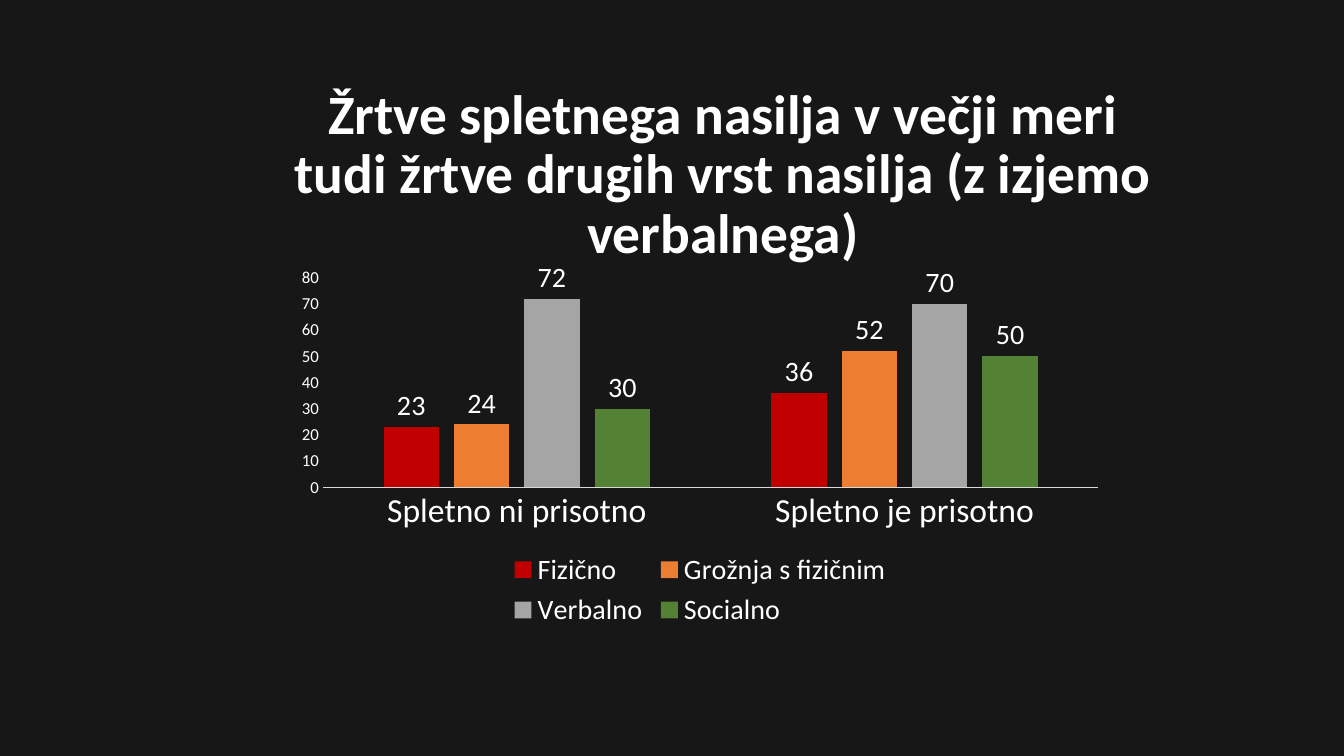
from pptx import Presentation
from pptx.chart.data import CategoryChartData
from pptx.dml.color import RGBColor
from pptx.enum.chart import XL_CHART_TYPE, XL_LABEL_POSITION, XL_LEGEND_POSITION, XL_TICK_MARK
from pptx.enum.text import MSO_ANCHOR, MSO_AUTO_SIZE, PP_ALIGN
from pptx.util import Inches, Pt

COLORS = {
    "back": "171717",
    "text": "FFFFFF",
    "axis": "D9D9D9",
    "Fizično": "C00000",
    "Grožnja s fizičnim": "ED7D31",
    "Verbalno": "A5A5A5",
    "Socialno": "548235",
}
VALUES = {
    "Fizično": (23, 36),
    "Grožnja s fizičnim": (24, 52),
    "Verbalno": (72, 70),
    "Socialno": (30, 50),
}


def color(name):
    return RGBColor.from_string(COLORS[name])


def style(font, size, bold=False):
    look = {"name": "Calibri", "size": Pt(size), "bold": bold}
    for key, value in look.items():
        setattr(font, key, value)
    font.color.rgb = color("text")


deck = Presentation()
deck.slide_width = Inches(13.33)
deck.slide_height = Inches(7.5)
slide = deck.slides.add_slide(deck.slide_layouts[5])
slide.background.fill.solid()
slide.background.fill.fore_color.rgb = color("back")

title = slide.shapes.title
place = {"left": 2.67, "top": 1.41, "width": 9, "height": 0.67}
for key, value in place.items():
    setattr(title, key, Inches(value))
frame = title.text_frame
frame.text = "Žrtve spletnega nasilja v večji meri tudi žrtve drugih vrst nasilja (z izjemo verbalnega)"
setup = {
    "word_wrap": True,
    "auto_size": MSO_AUTO_SIZE.NONE,
    "vertical_anchor": MSO_ANCHOR.MIDDLE,
}
for key, value in setup.items():
    setattr(frame, key, value)
line = frame.paragraphs[0]
line.alignment = PP_ALIGN.CENTER
line.line_spacing = 0.9
style(line.runs[0].font, 39.6, True)

data = CategoryChartData()
data.categories = ["Spletno ni prisotno", "Spletno je prisotno"]
for name, values in VALUES.items():
    data.add_series(name, values)
chart = slide.shapes.add_chart(
    XL_CHART_TYPE.COLUMN_CLUSTERED,
    Inches(2.83), Inches(2.58), Inches(8.23), Inches(3.7), data,
).chart
chart.has_title = False
style(chart.font, 10)

for axis, size in ((chart.category_axis, 24), (chart.value_axis, 12)):
    ticks = {
        "major_tick_mark": XL_TICK_MARK.NONE,
        "minor_tick_mark": XL_TICK_MARK.NONE,
        "has_major_gridlines": False,
    }
    for key, value in ticks.items():
        setattr(axis, key, value)
    style(axis.tick_labels.font, size)
base = chart.category_axis.format.line
base.color.rgb = color("axis")
base.width = Pt(0.75)
scale = chart.value_axis
scale.format.line.fill.background()
limits = {"minimum_scale": 0, "maximum_scale": 80, "major_unit": 10}
for key, value in limits.items():
    setattr(scale, key, value)

chart.has_legend = True
legend = chart.legend
legend.position = XL_LEGEND_POSITION.BOTTOM
legend.include_in_layout = False
style(legend.font, 20)

plot = chart.plots[0]
form = {"gap_width": 219, "overlap": -27, "vary_by_categories": False}
for key, value in form.items():
    setattr(plot, key, value)
for series in plot.series:
    series.format.fill.solid()
    series.format.fill.fore_color.rgb = color(series.name)
    labels = series.data_labels
    labels.show_value = True
    labels.position = XL_LABEL_POSITION.OUTSIDE_END
    style(labels.font, 20)

deck.save("out.pptx")
